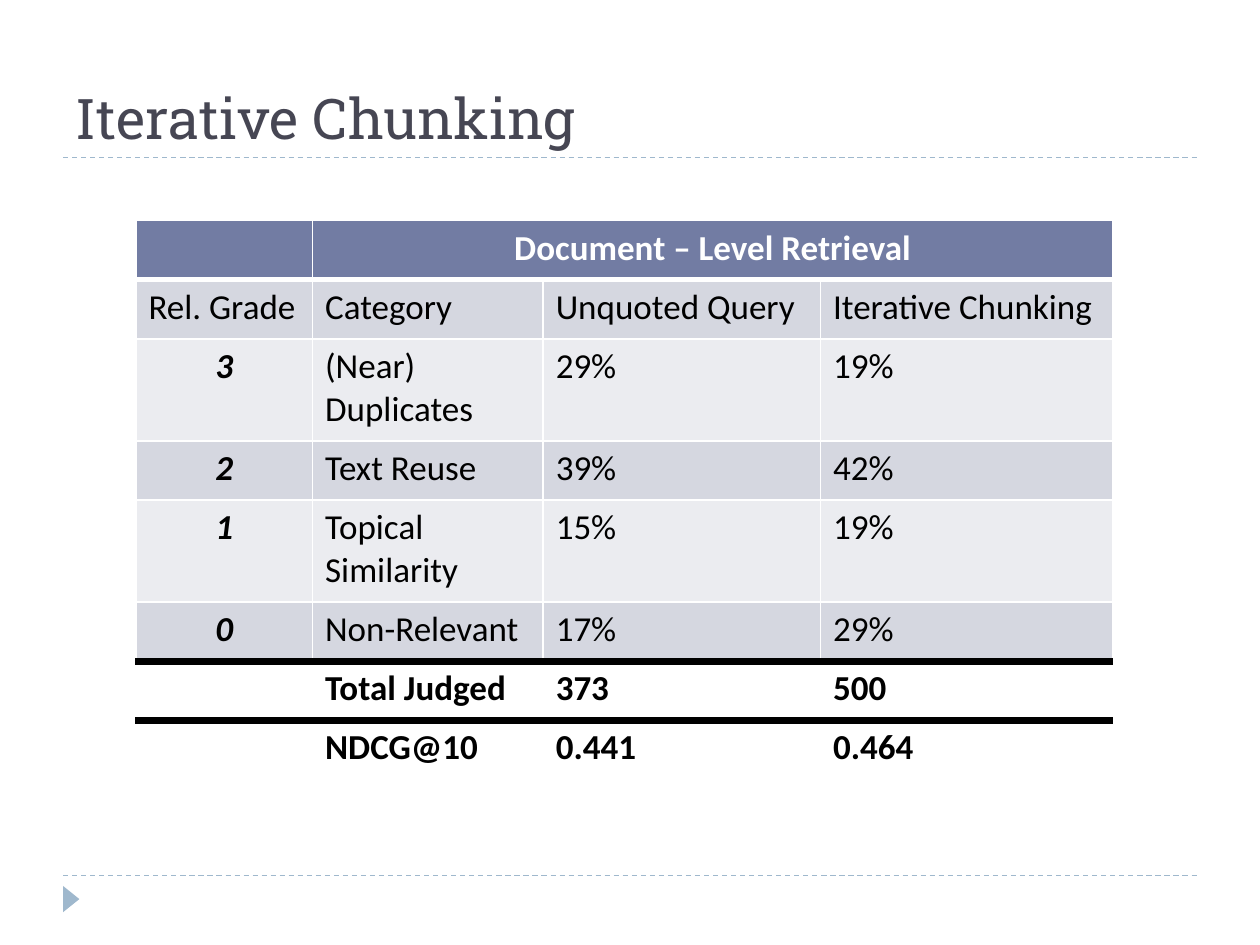
"""Build the Iterative Chunking slide with its document-level retrieval table."""
from dataclasses import dataclass

from lxml import etree
from pptx import Presentation
from pptx.dml.color import RGBColor
from pptx.enum.dml import MSO_LINE
from pptx.enum.shapes import MSO_CONNECTOR, MSO_SHAPE
from pptx.enum.text import MSO_ANCHOR, PP_ALIGN
from pptx.oxml.ns import qn
from pptx.slide import Slide
from pptx.table import _Cell
from pptx.util import Cm, Pt

STRAIGHT = MSO_CONNECTOR.STRAIGHT
TRIANGLE = MSO_SHAPE.ISOSCELES_TRIANGLE
DASH = MSO_LINE.DASH
BOTTOM = MSO_ANCHOR.BOTTOM
LEFT, CENTER = PP_ALIGN.LEFT, PP_ALIGN.CENTER

COLORS = {
    "title": "464653",
    "accent": "9FB8CD",
    "header": "727CA3",
    "dark_band": "D5D7E0",
    "light_band": "EBECF0",
    "white": "FFFFFF",
    "black": "000000",
}
TITLE_FONT, TABLE_FONT = "Roboto Slab", "Calibri"
COLUMN_WIDTHS = (3.56, 4.65, 5.59, 5.89)
SINGLE_HEIGHT, DOUBLE_HEIGHT = 1.19, 2.06


@dataclass(frozen=True)
class Rule:
    """A horizontal or vertical cell border."""
    color: str = "white"
    points: float = 1


THIN, HEADER_RULE, TOTAL_RULE = Rule(), Rule("white", 3), Rule("black", 4.5)


@dataclass(frozen=True)
class TableRow:
    """One row of the results table and its look."""
    texts: tuple[str, ...]
    fill: str
    below: Rule = THIN
    height: float = SINGLE_HEIGHT
    color: str = "black"
    bold: bool = False
    grade: bool = False


ROWS = (
    TableRow(("", "Document – Level Retrieval", "", ""), "header", HEADER_RULE,
             color="white", bold=True),
    TableRow(("Rel. Grade", "Category", "Unquoted Query", "Iterative Chunking"), "dark_band"),
    TableRow(("3", "(Near) Duplicates", "29%", "19%"), "light_band",
             height=DOUBLE_HEIGHT, grade=True),
    TableRow(("2", "Text Reuse", "39%", "42%"), "dark_band", grade=True),
    TableRow(("1", "Topical Similarity", "15%", "19%"), "light_band",
             height=DOUBLE_HEIGHT, grade=True),
    TableRow(("0", "Non-Relevant", "17%", "29%"), "dark_band", TOTAL_RULE, grade=True),
    TableRow(("", "Total Judged", "373", "500"), "white", TOTAL_RULE, bold=True),
    TableRow(("", "NDCG@10", "0.441", "0.464"), "white", bold=True),
)


def rgb(name: str) -> RGBColor:
    """Look up a named colour."""
    return RGBColor.from_string(COLORS[name])


def add_title(slide: Slide, wording: str) -> None:
    """Place and format the title placeholder."""
    title = slide.shapes.title
    title.left, title.top, title.width, title.height = Cm(1.27), Cm(0.43), Cm(22.86), Cm(2.74)
    frame = title.text_frame
    frame.text = wording
    frame.vertical_anchor = BOTTOM
    paragraph = frame.paragraphs[0]
    paragraph.alignment = LEFT
    font = paragraph.runs[0].font
    font.name, font.size, font.color.rgb = TITLE_FONT, Pt(32), rgb("title")


def add_divider(slide: Slide, y: float) -> None:
    """Draw a dashed line across the slide."""
    divider = slide.shapes.add_connector(STRAIGHT, Cm(1.27), Cm(y), Cm(24.13), Cm(y))
    divider.line.color.rgb = rgb("accent")
    divider.line.width = Pt(0.75)
    divider.line.dash_style = DASH
    etree.SubElement(divider._element.spPr, qn("a:effectLst"))


def add_marker(slide: Slide) -> None:
    """Draw the right-pointing triangle in the footer."""
    marker = slide.shapes.add_shape(TRIANGLE, Cm(1.17), Cm(17.96), Cm(0.53), Cm(0.33))
    marker.rotation = 90
    marker.shadow.inherit = False
    marker.fill.solid()
    marker.fill.fore_color.rgb = rgb("accent")
    marker.line.fill.background()


def set_borders(cell: _Cell, above: Rule, below: Rule) -> None:
    """Give a cell thin sides and the given top and bottom rules."""
    properties = cell._tc.get_or_add_tcPr()
    for edge, rule in (("L", THIN), ("R", THIN), ("T", above), ("B", below)):
        border = etree.SubElement(properties, qn(f"a:ln{edge}"), w=str(Pt(rule.points)))
        fill = etree.SubElement(border, qn("a:solidFill"))
        etree.SubElement(fill, qn("a:srgbClr"), val=COLORS[rule.color])


def fill_cell(cell: _Cell, row: TableRow, column: int, above: Rule) -> None:
    """Write and format one cell."""
    set_borders(cell, above, row.below)
    cell.fill.solid()
    cell.fill.fore_color.rgb = rgb(row.fill)
    is_grade = row.grade and column == 0
    cell.text_frame.text = row.texts[column]
    paragraph = cell.text_frame.paragraphs[0]
    paragraph.alignment = CENTER if is_grade or row.fill == "header" else LEFT
    for run in paragraph.runs:
        font = run.font
        font.name, font.size, font.color.rgb = TABLE_FONT, Pt(20), rgb(row.color)
        font.bold, font.italic = row.bold or is_grade, is_grade


def add_results(slide: Slide) -> None:
    """Add the retrieval results table."""
    total_height = sum(row.height for row in ROWS)
    results = slide.shapes.add_table(
        len(ROWS), len(COLUMN_WIDTHS), Cm(2.74), Cm(4.45),
        Cm(sum(COLUMN_WIDTHS)), Cm(total_height)).table
    for column, width in enumerate(COLUMN_WIDTHS):
        results.columns[column].width = Cm(width)
    above = THIN
    for index, row in enumerate(ROWS):
        results.rows[index].height = Cm(row.height)
        for column in range(len(COLUMN_WIDTHS)):
            fill_cell(results.cell(index, column), row, column, above)
        above = row.below
    results.cell(0, 1).merge(results.cell(0, 3))


def main() -> None:
    """Build and save the slide."""
    presentation = Presentation()
    presentation.slide_width, presentation.slide_height = Cm(25.4), Cm(19.05)
    slide = presentation.slides.add_slide(presentation.slide_layouts[5])
    for y in (17.65, 3.17):
        add_divider(slide, y)
    add_marker(slide)
    add_title(slide, "Iterative Chunking")
    add_results(slide)
    presentation.save("out.pptx")


if __name__ == "__main__":
    main()
